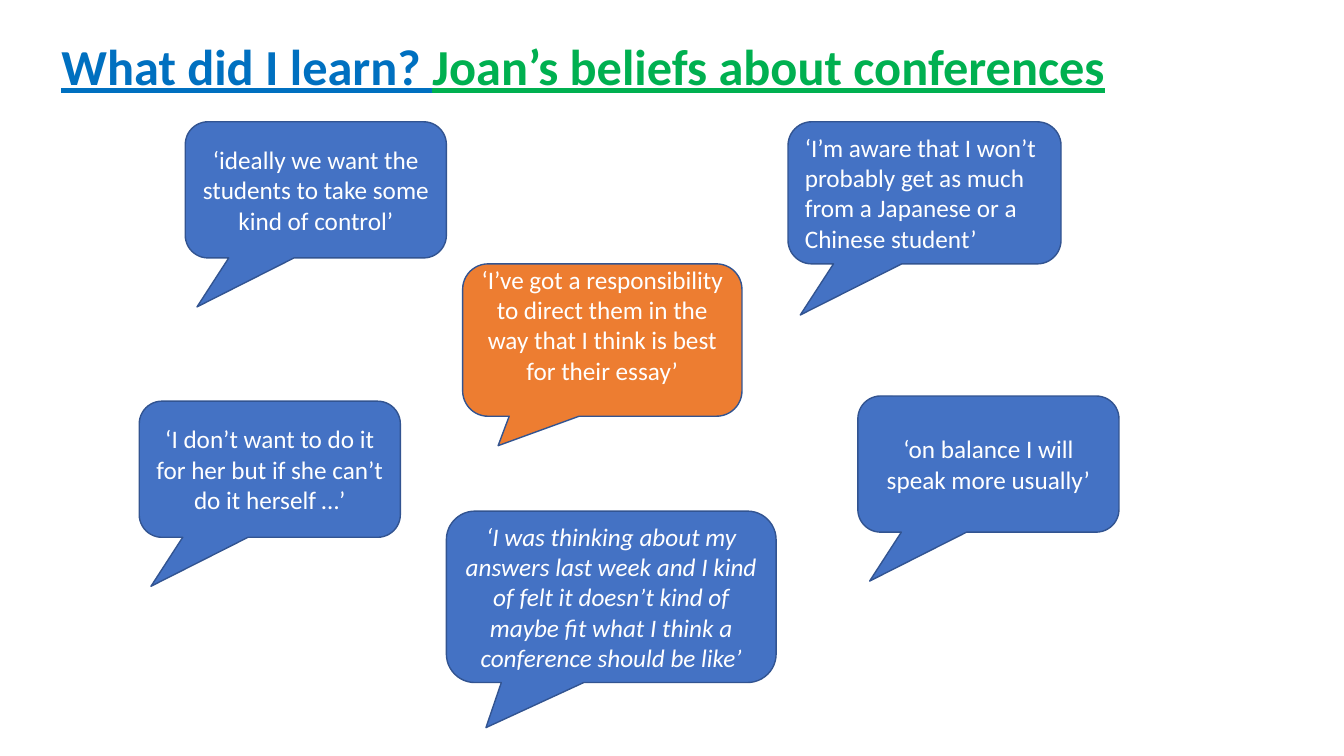
"""Build a slide of speech bubbles quoting Joan's beliefs about conferences."""
from collections import namedtuple
from dataclasses import dataclass

from pptx import Presentation
from pptx.dml.color import RGBColor
from pptx.enum.shapes import MSO_SHAPE as Preset
from pptx.enum.text import MSO_ANCHOR as Anchor, PP_ALIGN as Align
from pptx.util import Cm, Pt


@dataclass(frozen=True)
class Theme:
    font: str = "Calibri"
    title_size: int = 36
    quote_size: int = 18
    outline_width: int = 1
    question: str = "0070C0"
    topic: str = "00B050"
    belief: str = "4472C4"
    responsibility: str = "ED7D31"
    outline: str = "325491"
    quote: str = "FFFFFF"


theme = Theme()
Bubble = namedtuple(
    "Bubble",
    "quote left top width height tail fill align italic bottom_inset",
    defaults=(6.58, 3.43, (-0.455, 0.86), theme.belief, Align.CENTER, False, 0.13),
)


def add_run(paragraph, text, size, color):
    run = paragraph.add_run()
    run.text = text
    run.font.name = theme.font
    run.font.size = Pt(size)
    run.font.color.rgb = RGBColor.from_string(color)
    return run


presentation = Presentation()
presentation.slide_width = Cm(33.87)
presentation.slide_height = Cm(19.05)
slide = presentation.slides.add_slide(presentation.slide_layouts[6])

title = slide.shapes.add_textbox(Cm(1.3), Cm(0.69), Cm(29.21), Cm(2.11)).text_frame
title.word_wrap = True
title.vertical_anchor = Anchor.MIDDLE
heading = title.paragraphs[0]
heading.line_spacing = 0.9
for words, color in [
    ("What did I learn? ", theme.question),
    ("Joan’s beliefs about conferences", theme.topic),
]:
    part = add_run(heading, words, theme.title_size, color)
    part.font.bold = True
    part.font.underline = True

bubbles = [
    Bubble("‘ideally we want the students to take some kind of control’", 4.67, 3.07),
    Bubble("‘I don’t want to do it for her but if she can’t do it herself …’", 3.51, 10.11),
    Bubble(
        "‘I’ve got a responsibility to direct them in the way that I think is best for their essay’",
        11.66, 6.65, 7.04, 3.84, tail=(-0.373, 0.693),
        fill=theme.responsibility, bottom_inset=0.9,
    ),
    Bubble(
        "‘I’m aware that I won’t probably get as much from a Japanese or a Chinese student’",
        19.86, 3.07, 6.88, 3.58, align=Align.LEFT,
    ),
    Bubble("‘on balance I will speak more usually’", 21.62, 9.98),
    Bubble(
        "‘I was thinking about my answers last week and I kind of felt it doesn’t kind of "
        "maybe fit what I think a conference should be like’",
        11.25, 12.88, 8.31, 4.32, tail=(-0.38, 0.763), italic=True,
    ),
]

for bubble in bubbles:
    callout = slide.shapes.add_shape(
        Preset.ROUNDED_RECTANGULAR_CALLOUT,
        Cm(bubble.left), Cm(bubble.top), Cm(bubble.width), Cm(bubble.height),
    )
    callout.shadow.inherit = False
    callout.adjustments[0], callout.adjustments[1] = bubble.tail
    callout.fill.solid()
    callout.fill.fore_color.rgb = RGBColor.from_string(bubble.fill)
    callout.line.color.rgb = RGBColor.from_string(theme.outline)
    callout.line.width = Pt(theme.outline_width)

    speech = callout.text_frame
    speech.word_wrap = True
    speech.vertical_anchor = Anchor.MIDDLE
    speech.margin_bottom = Cm(bubble.bottom_inset)
    speech.paragraphs[0].alignment = bubble.align
    words = add_run(speech.paragraphs[0], bubble.quote, theme.quote_size, theme.quote)
    words.font.italic = bubble.italic

presentation.save("out.pptx")
